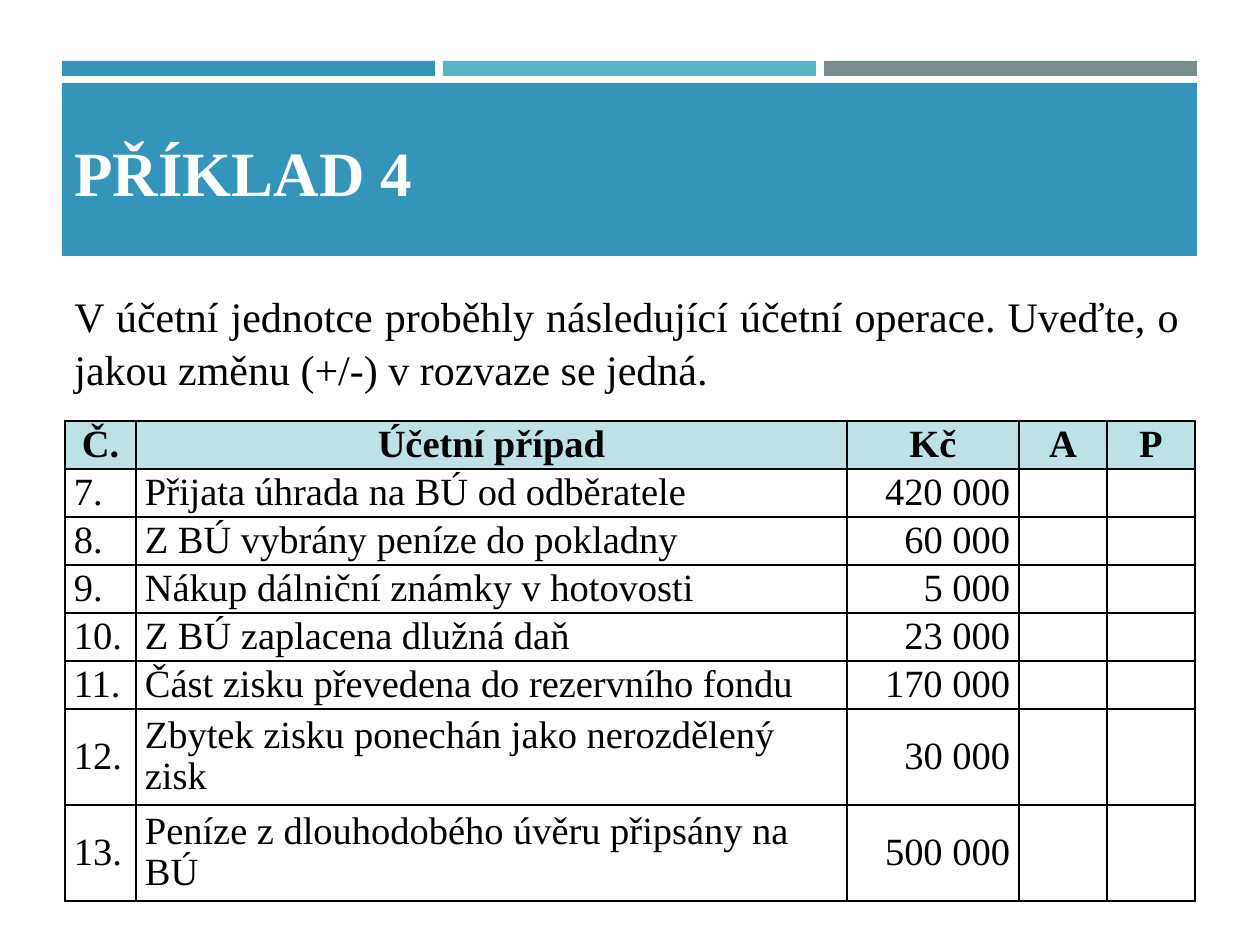
from dataclasses import dataclass

from lxml import etree
from pptx import Presentation
from pptx.dml.color import RGBColor
from pptx.enum.shapes import MSO_SHAPE
from pptx.enum.text import MSO_ANCHOR, PP_ALIGN
from pptx.oxml.ns import qn
from pptx.util import Emu, Pt

RECTANGLE = MSO_SHAPE.RECTANGLE
TOP, MIDDLE, BOTTOM = MSO_ANCHOR.TOP, MSO_ANCHOR.MIDDLE, MSO_ANCHOR.BOTTOM
LEFT, CENTER, RIGHT, JUSTIFY = (
    PP_ALIGN.LEFT, PP_ALIGN.CENTER, PP_ALIGN.RIGHT, PP_ALIGN.JUSTIFY)
PX_PER_INCH = 126


@dataclass(frozen=True)
class Theme:
    font: str = "Times New Roman"
    blue: str = "3494BA"
    teal: str = "58B6C0"
    grey: str = "7A8C8E"
    header: str = "BCE2E6"
    white: str = "FFFFFF"
    black: str = "000000"
    title_size: int = 36
    task_size: int = 24
    table_size: int = 22
    border_width: int = 1


THEME = Theme()

HEADINGS = ("Č.", "Účetní případ", "Kč", "A", "P")
ALIGNMENTS = (LEFT, LEFT, RIGHT, CENTER, CENTER)
COLUMN_WIDTHS = (71, 711, 172, 88, 88)
ROW_HEIGHTS = (48,) * 6 + (96,) * 2
FIRST_NUMBER = 7
CASES = (
    ("Přijata úhrada na BÚ od odběratele", "420 000"),
    ("Z BÚ vybrány peníze do pokladny", "60 000"),
    ("Nákup dálniční známky v hotovosti", "5 000"),
    ("Z BÚ zaplacena dlužná daň", "23 000"),
    ("Část zisku převedena do rezervního fondu", "170 000"),
    ("Zbytek zisku ponechán jako nerozdělený zisk", "30 000"),
    ("Peníze z dlouhodobého úvěru připsány na BÚ", "500 000"),
)


def px(length):
    return Emu(round(length * 914400 / PX_PER_INCH))


def write(frame, text, size, color, align=LEFT, bold=False, spacing=1.0):
    paragraph = frame.paragraphs[0]
    paragraph.text = text
    paragraph.alignment = align
    paragraph.line_spacing = spacing
    font = paragraph.font
    font.name, font.size, font.bold = THEME.font, Pt(size), bold
    font.color.rgb = RGBColor.from_string(color)


def add_bar(slide, left, top, width, height, color):
    bar = slide.shapes.add_shape(
        RECTANGLE, px(left), px(top), px(width), px(height))
    bar.shadow.inherit = False
    bar.fill.solid()
    bar.fill.fore_color.rgb = RGBColor.from_string(color)
    bar.line.fill.background()


def add_text(slide, left, top, width, height, anchor, text, **style):
    frame = slide.shapes.add_textbox(
        px(left), px(top), px(width), px(height)).text_frame
    frame.word_wrap = True
    frame.vertical_anchor = anchor
    write(frame, text, **style)


def set_borders(cell):
    properties = cell._tc.get_or_add_tcPr()
    for position, side in enumerate(("a:lnL", "a:lnR", "a:lnT", "a:lnB")):
        line = etree.Element(qn(side), w=str(Pt(THEME.border_width)))
        fill = etree.SubElement(line, qn("a:solidFill"))
        etree.SubElement(fill, qn("a:srgbClr"), val=THEME.black)
        properties.insert(position, line)


def fill_cell(cell, text, align, is_header):
    cell.margin_left = cell.margin_right = px(9)
    cell.margin_top = cell.margin_bottom = 0
    cell.vertical_anchor = MIDDLE
    if is_header:
        cell.fill.solid()
        cell.fill.fore_color.rgb = RGBColor.from_string(THEME.header)
    else:
        cell.fill.background()
    write(cell.text_frame, text, THEME.table_size, THEME.black,
          CENTER if is_header else align, is_header, spacing=0.96)
    set_borders(cell)


def add_case_table(slide, left, top):
    rows = [HEADINGS] + [
        (f"{number}.", case, amount, "", "")
        for number, (case, amount) in enumerate(CASES, FIRST_NUMBER)]
    table = slide.shapes.add_table(
        len(rows), len(HEADINGS), px(left), px(top),
        px(sum(COLUMN_WIDTHS)), px(sum(ROW_HEIGHTS))).table
    for column, width in zip(table.columns, COLUMN_WIDTHS):
        column.width = px(width)
    for row, height in zip(table.rows, ROW_HEIGHTS):
        row.height = px(height)
    for r, texts in enumerate(rows):
        for c, (text, align) in enumerate(zip(texts, ALIGNMENTS)):
            fill_cell(table.cell(r, c), text, align, r == 0)


def main():
    prs = Presentation()
    prs.slide_width, prs.slide_height = px(1260), px(945)
    slide = prs.slides.add_slide(prs.slide_layouts[6])

    # Three accent strips above the title band
    for i, color in enumerate((THEME.blue, THEME.teal, THEME.grey)):
        add_bar(slide, 62 + i * 381, 61, 373, 15, color)

    # Title band
    add_bar(slide, 62, 83, 1135, 173, THEME.blue)
    add_text(slide, 62, 95, 1136, 121, BOTTOM, "PŘÍKLAD 4",
             size=THEME.title_size, color=THEME.white, bold=True, spacing=0.9)

    # Task
    add_text(slide, 62, 282, 1130, 115, TOP,
             "V účetní jednotce proběhly následující účetní operace. "
             "Uveďte, o jakou změnu (+/-) v rozvaze se jedná.",
             size=THEME.task_size, color=THEME.black, align=JUSTIFY,
             spacing=1.05)

    # Accounting cases
    add_case_table(slide, 65, 421)

    prs.save("out.pptx")


if __name__ == "__main__":
    main()
